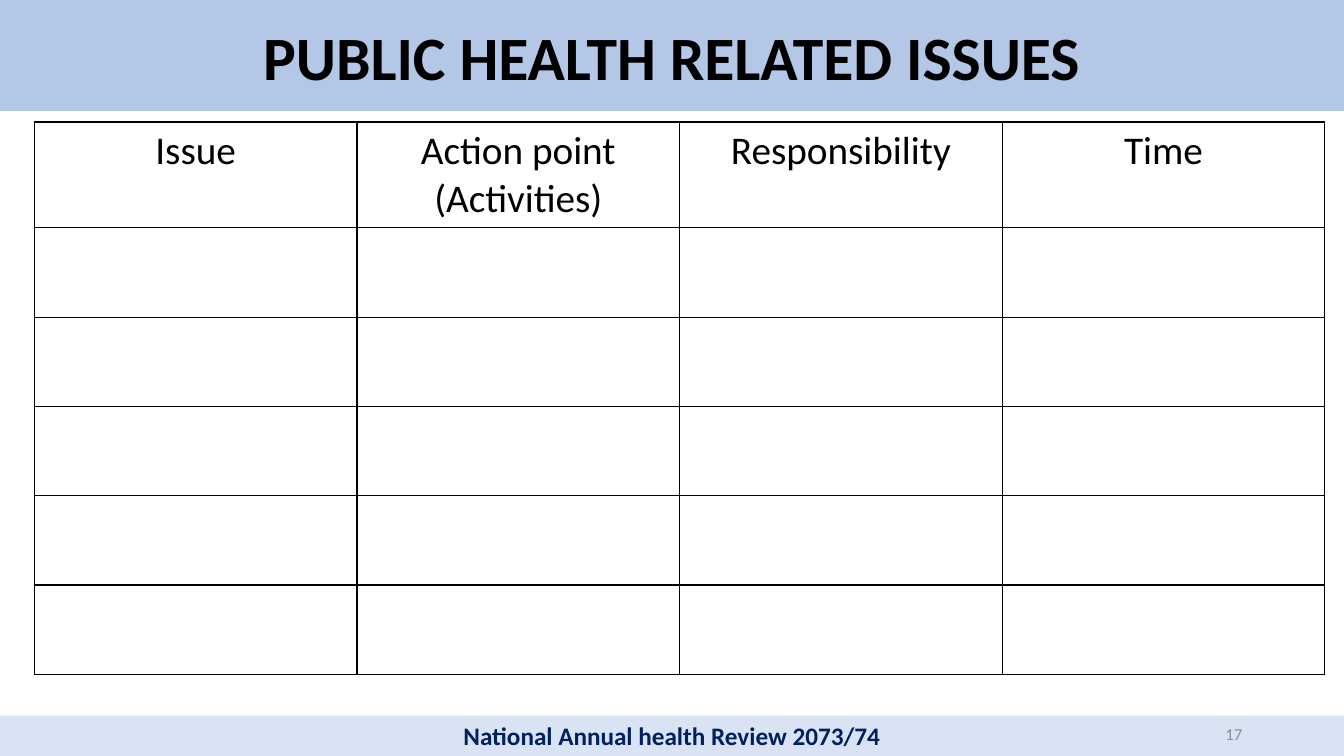
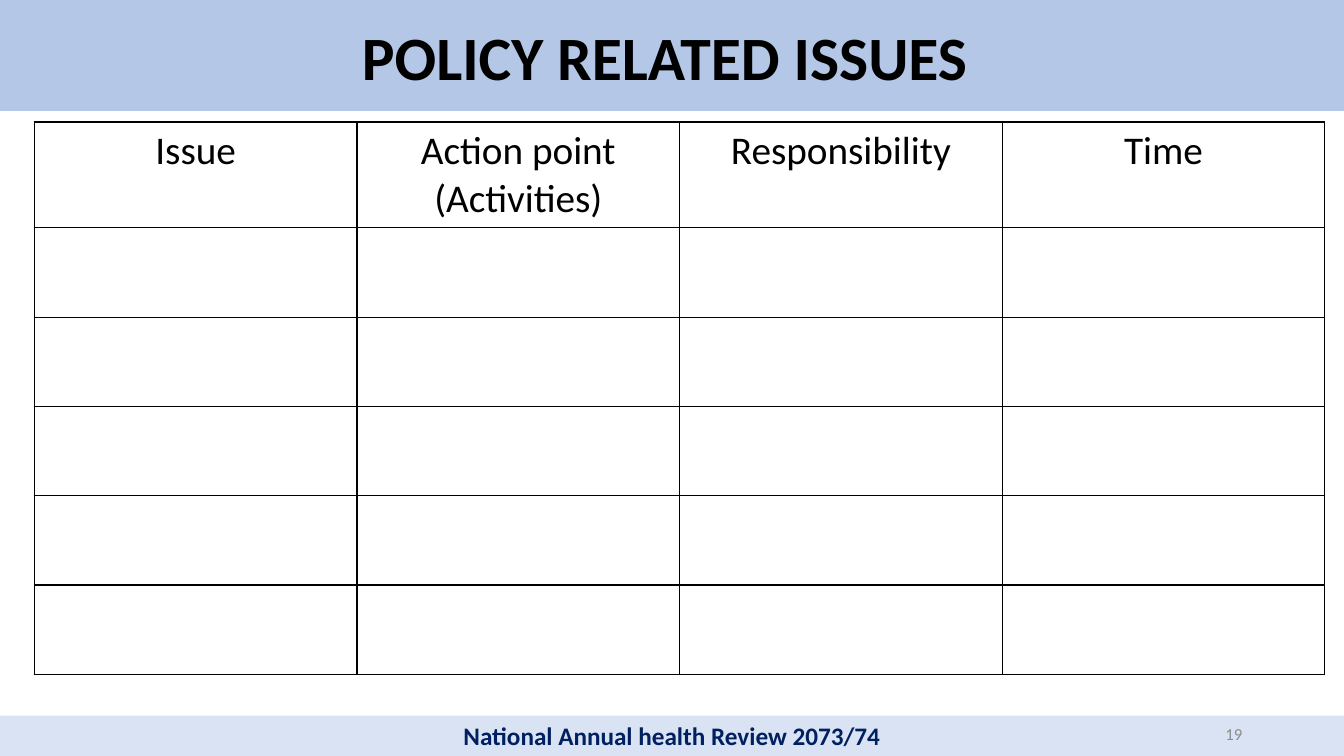
from lxml.etree import SubElement
from pptx import Presentation
from pptx.dml.color import RGBColor
from pptx.enum.shapes import MSO_SHAPE
from pptx.enum.text import MSO_ANCHOR, MSO_AUTO_SIZE, PP_ALIGN
from pptx.oxml.ns import qn
from pptx.util import Inches, Pt

SLIDES = [
    ("PUBLIC HEALTH RELATED ISSUES", "17"),
    ("POLICY RELATED ISSUES ", "19"),
]
HEADINGS = ["Issue", "Action point (Activities)", "Responsibility", "Time"]
FOOTER = "National Annual health Review 2073/74"
EMPTY_ROWS = 5

COLORS = {
    "title_band": "B4C7E7",
    "footer_band": "DAE3F3",
    "footer_text": "002060",
    "number": "8C8C8C",
    "ink": "000000",
}
FONT = "Calibri"
WIDTH, HEIGHT = 13.33, 7.5
FOOTER_HEIGHT = 0.4
TITLE_TOP, TITLE_HEIGHT = 0.01, 1.09
TABLE_LEFT, TABLE_TOP, TABLE_WIDTH, TABLE_HEIGHT = 0.34, 1.21, 12.8, 5.46
HEADING_HEIGHT = 1.03


def box(left, top, width, height):
    return [Inches(length) for length in (left, top, width, height)]


def paint(target, color):
    target.fill.solid()
    target.fill.fore_color.rgb = RGBColor.from_string(COLORS[color])


def write(frame, text, size, color="ink", bold=False, align=PP_ALIGN.CENTER,
          anchor=MSO_ANCHOR.MIDDLE):
    frame.word_wrap = True
    frame.vertical_anchor = anchor
    paragraph = frame.paragraphs[0]
    paragraph.alignment = align
    run = paragraph.add_run()
    run.text = text
    run.font.name = FONT
    run.font.size = Pt(size)
    run.font.bold = bold
    run.font.color.rgb = RGBColor.from_string(COLORS[color])


def add_band(slide, top, height, color):
    band = slide.shapes.add_shape(MSO_SHAPE.RECTANGLE, *box(0, top, WIDTH, height))
    band.shadow.inherit = False
    band.line.fill.background()
    paint(band, color)
    return band


def add_shared_bands(slide, layout):
    title_band = add_band(slide, 0, 1, "title_band")
    footer_band = add_band(slide, HEIGHT - FOOTER_HEIGHT, FOOTER_HEIGHT, "footer_band")
    write(footer_band.text_frame, FOOTER, 18, color="footer_text", bold=True)
    for band in (title_band, footer_band):
        layout.shapes.element.insert(2, band.element)


def add_title(slide, text):
    title = slide.shapes.title
    title.left, title.top, title.width, title.height = box(
        0, TITLE_TOP, WIDTH, TITLE_HEIGHT)
    paint(title, "title_band")
    title.text_frame.auto_size = MSO_AUTO_SIZE.NONE
    write(title.text_frame, text, 44, bold=True)


def format_cell(cell):
    cell.margin_left = cell.margin_right = Inches(0.08)
    cell.margin_top = cell.margin_bottom = Inches(0.05)
    properties = cell._tc.get_or_add_tcPr()
    for side in ("a:lnL", "a:lnR", "a:lnT", "a:lnB"):
        border = SubElement(properties, qn(side), w=str(Pt(1)))
        fill = SubElement(border, qn("a:solidFill"))
        SubElement(fill, qn("a:srgbClr"), val=COLORS["ink"])
    cell.fill.background()


def add_issue_table(slide):
    frame = slide.shapes.add_table(
        EMPTY_ROWS + 1, len(HEADINGS),
        *box(TABLE_LEFT, TABLE_TOP, TABLE_WIDTH, TABLE_HEIGHT))
    table = frame.table
    table.first_row = table.horz_banding = False
    row_height = (TABLE_HEIGHT - HEADING_HEIGHT) / EMPTY_ROWS
    for index, row in enumerate(table.rows):
        row.height = Inches(row_height if index else HEADING_HEIGHT)
    for cell in table.iter_cells():
        format_cell(cell)
    for column, heading in enumerate(HEADINGS):
        write(table.cell(0, column).text_frame, heading, 28, anchor=MSO_ANCHOR.TOP)


def add_number(slide, number):
    number_box = slide.shapes.add_textbox(*box(9.42, 7.08, 3, FOOTER_HEIGHT))
    write(number_box.text_frame, number, 12, color="number", align=PP_ALIGN.RIGHT)


def main():
    deck = Presentation()
    deck.slide_width, deck.slide_height = Inches(WIDTH), Inches(HEIGHT)
    layout = deck.slide_layouts[5]
    for index, (title, number) in enumerate(SLIDES):
        slide = deck.slides.add_slide(layout)
        if index == 0:
            add_shared_bands(slide, layout)
        add_issue_table(slide)
        add_title(slide, title)
        add_number(slide, number)
    deck.save("out.pptx")


if __name__ == "__main__":
    main()
